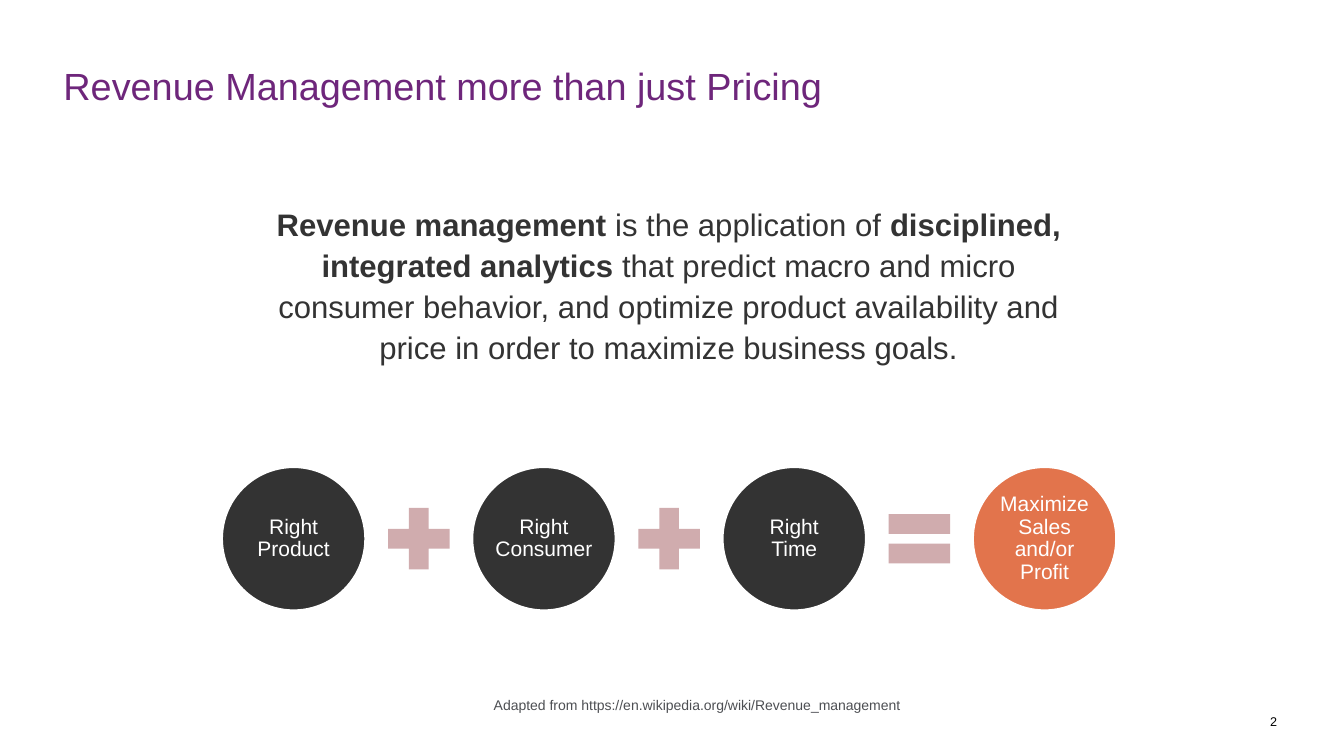
from pptx import Presentation
from pptx.dml.color import RGBColor
from pptx.enum.shapes import MSO_SHAPE
from pptx.enum.text import MSO_ANCHOR, PP_ALIGN
from pptx.util import Inches, Pt

OVAL, PLUS, EQUAL = MSO_SHAPE.OVAL, MSO_SHAPE.MATH_PLUS, MSO_SHAPE.MATH_EQUAL
TOP, MIDDLE = MSO_ANCHOR.TOP, MSO_ANCHOR.MIDDLE
LEFT, CENTER, RIGHT = PP_ALIGN.LEFT, PP_ALIGN.CENTER, PP_ALIGN.RIGHT

WIDTH, HEIGHT = Inches(13.33), Inches(7.5)
COLUMN, ROW = WIDTH / 40, HEIGHT / 30
FONT = "Arial"
COLORS = {
    "title": "6E267B",
    "dark": "333333",
    "goal": "E2744C",
    "sign": "D0ACAE",
    "white": "FFFFFF",
    "source": "4D4F53",
    "number": "000000",
}

FIRST_CENTER, CENTER_ROW, STEP = 8.74, 21.38, 7.45
CIRCLE_SIZE, SIGN_SIZE = Inches(1.43), Inches(0.83)
CIRCLES = [
    ("Right Product", "dark"),
    ("Right Consumer", "dark"),
    ("Right Time", "dark"),
    ("Maximize Sales and/or Profit", "goal"),
]
SIGNS = [PLUS, PLUS, EQUAL]
DEFINITION = [
    ("Revenue management", True),
    (" is the application of ", False),
    ("disciplined, integrated analytics", True),
    (" that predict macro and micro consumer behavior, and optimize product "
     "availability and price in order to maximize business goals.", False),
]


def rgb(name):
    """Return the named palette colour."""
    return RGBColor.from_string(COLORS[name])


def set_frame(frame, insets, anchor, wrap=True):
    """Set the horizontal and vertical insets, anchor and wrapping."""
    across, down = (Inches(inset) for inset in insets)
    frame.margin_left = frame.margin_right = across
    frame.margin_top = frame.margin_bottom = down
    frame.vertical_anchor = anchor
    frame.word_wrap = wrap


def write_spans(para, spans, size, color, align, spacing=1.0):
    """Write (text, bold) spans into a paragraph."""
    para.alignment = align
    para.line_spacing = spacing
    for text, bold in spans:
        span = para.add_run()
        span.text = text
        span.font.name = FONT
        span.font.size = Pt(size)
        span.font.bold = bold
        span.font.color.rgb = rgb(color)


def add_text(page, area, spans, size, color, align=LEFT, anchor=MIDDLE,
             insets=(0, 0.05), spacing=1.0, wrap=True):
    """Add a text box on an area of (column, row, columns, rows)."""
    column, row, columns, rows = area
    box = page.shapes.add_textbox(int(column * COLUMN), int(row * ROW),
                                  int(columns * COLUMN), int(rows * ROW))
    set_frame(box.text_frame, insets, anchor, wrap)
    write_spans(box.text_frame.paragraphs[0], spans, size, color, align, spacing)


def add_centered(page, kind, position, size, color):
    """Add a filled square-bounded shape centred at a place in the equation."""
    center = (FIRST_CENTER + position * STEP) * COLUMN
    shape = page.shapes.add_shape(kind, int(center - size / 2),
                                  int(CENTER_ROW * ROW - size / 2), size, size)
    shape.shadow.inherit = False
    shape.fill.solid()
    shape.fill.fore_color.rgb = rgb(color)
    shape.line.fill.background()
    return shape


def add_circle(page, position, label, color):
    """Add a labelled circle with a white outline."""
    circle = add_centered(page, OVAL, position, CIRCLE_SIZE, color)
    circle.line.color.rgb = rgb("white")
    circle.line.width = Pt(2)
    set_frame(circle.text_frame, (0.02, 0.02), MIDDLE)
    write_spans(circle.text_frame.paragraphs[0], [(label, False)], 15, "white",
                CENTER, 0.9)


def main():
    """Build and save the slide."""
    deck = Presentation()
    deck.slide_width, deck.slide_height = WIDTH, HEIGHT
    page = deck.slides.add_slide(deck.slide_layouts[6])
    add_text(page, (1.89, 2, 36, 2.8),
             [("Revenue Management more than just Pricing", False)], 27, "title")
    add_text(page, (7.53, 8, 24.75, 6.72), DEFINITION, 22.2, "dark", CENTER, TOP,
             (0, 0), 1.1)
    for position, (label, color) in enumerate(CIRCLES):
        add_circle(page, position, label, color)
    for position, kind in enumerate(SIGNS):
        add_centered(page, kind, position + 0.5, SIGN_SIZE, "sign")
    add_text(page, (14.4, 27.44, 12.78, 1.08),
             [("Adapted from https://en.wikipedia.org/wiki/Revenue_management", False)],
             10, "source", anchor=TOP, insets=(0.1, 0.05), wrap=False)
    add_text(page, (28.68, 27.84, 9.33, 1.6), [("2", False)], 9, "number", RIGHT)
    deck.save("out.pptx")


if __name__ == "__main__":
    main()
